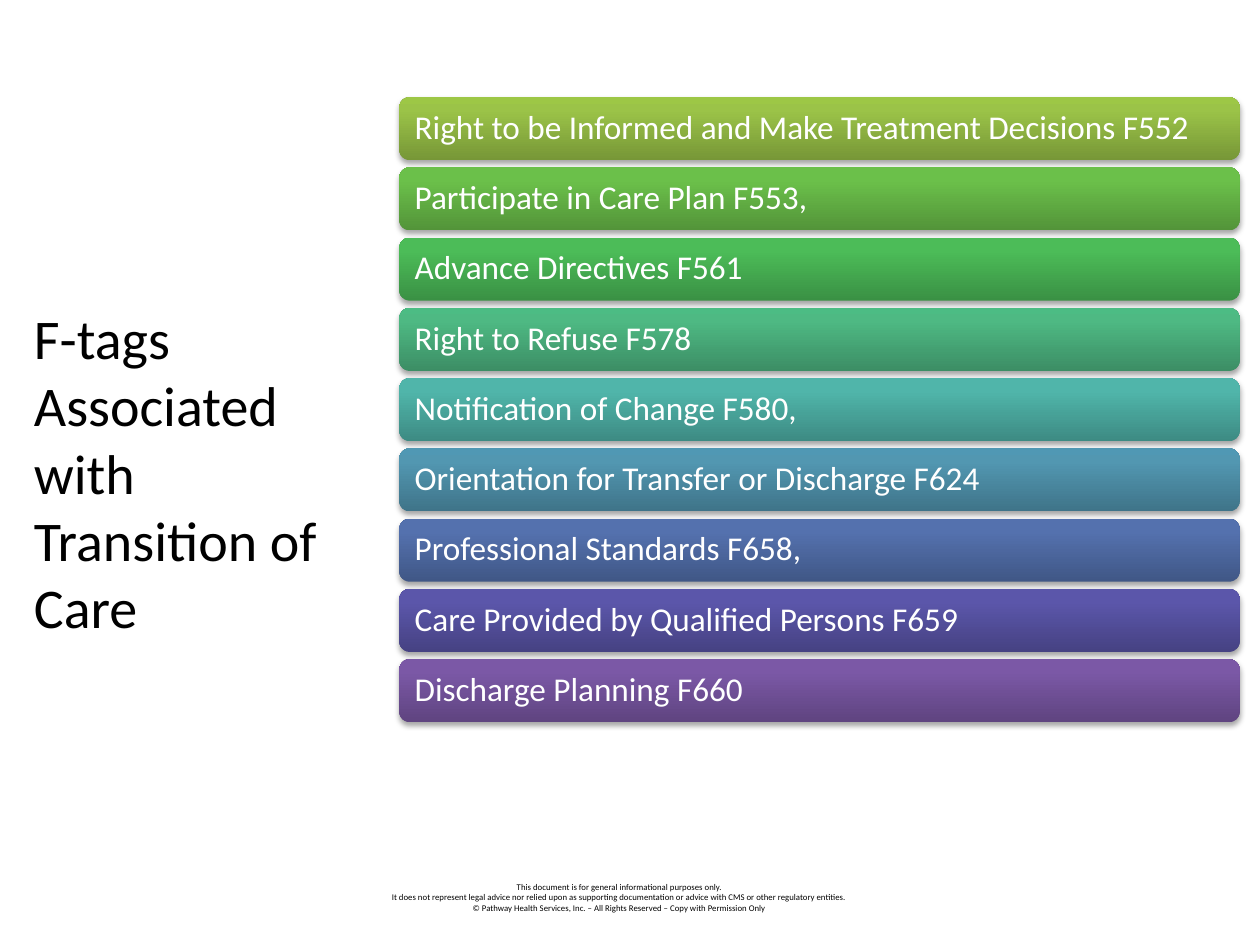
"""Build a slide listing the F-tags associated with transition of care."""
from copy import deepcopy

from lxml import etree
from pptx import Presentation
from pptx import util as u
from pptx.dml.color import RGBColor
from pptx.enum import shapes, text
from pptx.oxml.ns import qn

TITLE = "F-tags Associated with Transition of Care"
TAGS = [
    ("Right to be Informed and Make Treatment Decisions F552", ("779737", "9BC348", "9DC746")),
    ("Participate in Care Plan F553,", ("539439", "6BC04A", "6BC348")),
    ("Advance Directives F561", ("3A9144", "4CBC58", "4ABF57")),
    ("Right to Refuse F578", ("3C8E65", "4EB983", "4CBC84")),
    ("Notification of Change F580,", ("3D8B83", "50B5AA", "4EB8AC")),
    ("Orientation for Transfer or Discharge F624", ("3F7489", "5297B1", "5098B4")),
    ("Professional Standards F658,", ("405786", "5471AE", "5271B0")),
    ("Care Provided by Qualified Persons F659", ("464283", "5B56AA", "5A55AC")),
    ("Discharge Planning F660", ("5F4480", "7B58A6", "7C57A8")),
]
DISCLAIMER = [
    "This document is for general informational purposes only.",
    "It does not represent legal advice nor relied upon as supporting documentation "
    "or advice with CMS or other regulatory entities.",
    "© Pathway Health Services, Inc. – All Rights Reserved – Copy with Permission Only",
]
THEME = {
    "font": "Calibri",
    "title": {"size": 32, "color": "000000"},
    "tag": {"size": 19, "color": "FFFFFF"},
    "disclaimer": {"size": 5, "color": "000000"},
    "stops": (0, 0.8, 1),
    "shadow": {"color": "000000", "alpha": 35, "blur": 3.1, "distance": 1.8, "angle": 90},
}
TITLE_BOX = (0.43, 4.52, 6.99, 9.98)
DISCLAIMER_BOX = (6.99, 17.65, 11, 0.89)
BAR_LEFT, BAR_WIDTH, BAR_HEIGHT = 8.05, 16.94, 1.27
FIRST_TOP, LAST_TOP = 1.96, 13.29
BAR_INSET = 0.25


def set_all(target, values):
    for name, value in values.items():
        setattr(target, name, value)


def write(shape, lines, style, frame_format, paragraph_format):
    frame = shape.text_frame
    frame.text = "\n".join(lines)
    set_all(frame, {"word_wrap": True, "auto_size": text.MSO_AUTO_SIZE.NONE, **frame_format})
    for paragraph in frame.paragraphs:
        set_all(paragraph, paragraph_format)
        set_all(paragraph.font, {"name": THEME["font"], "size": u.Pt(style["size"])})
        paragraph.font.color.rgb = RGBColor.from_string(style["color"])


def fill_gradient(shape, colors):
    shape.fill.gradient()
    shape.fill.gradient_angle = 90
    stop_list = shape.element.spPr.find(".//" + qn("a:gsLst"))
    stop_list.append(deepcopy(stop_list[-1]))
    for stop, position, color in zip(shape.fill.gradient_stops, THEME["stops"], colors):
        stop.position = position
        stop.color.rgb = RGBColor.from_string(color)


def add_shadow(shape):
    shadow = THEME["shadow"]
    shape.shadow.inherit = False
    effects = shape.element.spPr.find(qn("a:effectLst"))
    outer = etree.SubElement(effects, qn("a:outerShdw"), {
        "blurRad": str(u.Pt(shadow["blur"])),
        "dist": str(u.Pt(shadow["distance"])),
        "dir": str(shadow["angle"] * 60000),
        "rotWithShape": "0",
    })
    color = etree.SubElement(outer, qn("a:srgbClr"), val=shadow["color"])
    etree.SubElement(color, qn("a:alpha"), val=str(shadow["alpha"] * 1000))


def add_tag_bar(slide, top, label, colors):
    bar = slide.shapes.add_shape(
        shapes.MSO_SHAPE.ROUNDED_RECTANGLE,
        *map(u.Cm, (BAR_LEFT, top, BAR_WIDTH, BAR_HEIGHT)))
    fill_gradient(bar, colors)
    bar.line.fill.background()
    add_shadow(bar)
    write(bar, [label], THEME["tag"],
          {"vertical_anchor": text.MSO_ANCHOR.MIDDLE,
           "margin_left": u.Cm(BAR_INSET), "margin_right": u.Cm(BAR_INSET)},
          {"alignment": text.PP_ALIGN.LEFT, "line_spacing": 0.9})


def main():
    presentation = Presentation()
    set_all(presentation, {"slide_width": u.Cm(25.4), "slide_height": u.Cm(19.05)})
    slide = presentation.slides.add_slide(presentation.slide_layouts.get_by_name("Title Only"))

    disclaimer = slide.shapes.add_textbox(*map(u.Cm, DISCLAIMER_BOX))
    write(disclaimer, DISCLAIMER, THEME["disclaimer"], {},
          {"alignment": text.PP_ALIGN.CENTER})

    title = slide.shapes.title
    set_all(title, dict(zip(("left", "top", "width", "height"), map(u.Cm, TITLE_BOX))))
    write(title, [TITLE], THEME["title"], {"vertical_anchor": text.MSO_ANCHOR.MIDDLE},
          {"alignment": text.PP_ALIGN.LEFT})

    pitch = (LAST_TOP - FIRST_TOP) / (len(TAGS) - 1)
    for index, (label, colors) in enumerate(TAGS):
        add_tag_bar(slide, FIRST_TOP + index * pitch, label, colors)

    presentation.save("out.pptx")


if __name__ == "__main__":
    main()
